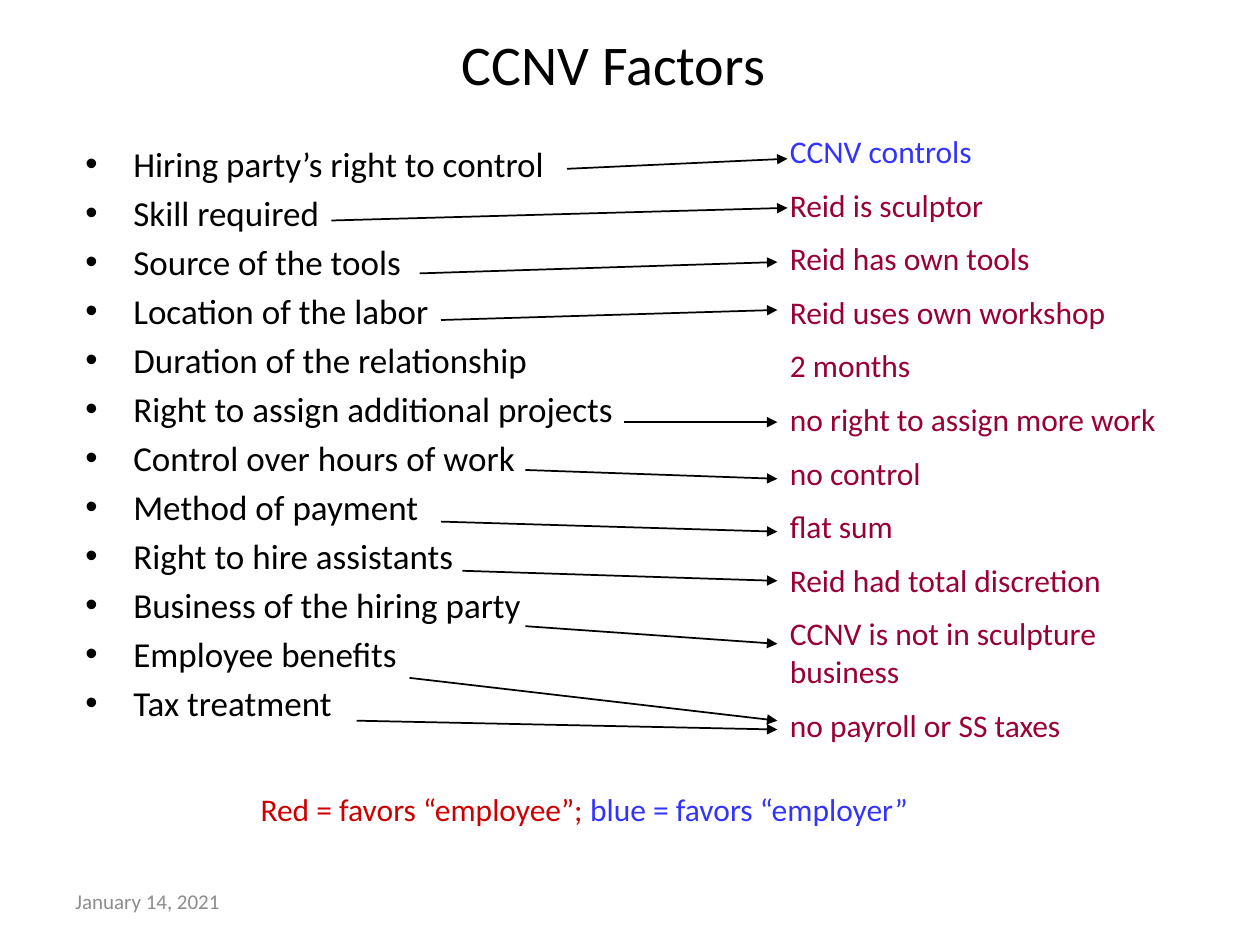
"""Build the CCNV factors slide."""
from lxml import etree
from pptx import Presentation
from pptx import util as u
from pptx.dml.color import RGBColor
from pptx.enum import shapes, text
from pptx.oxml.ns import qn

BLACK, BLUE, RED, WINE, GREY = "000000", "3333FF", "CC0000", "990033", "8C8C8C"
FONT = "Calibri"

FACTORS = [
    ("Hiring party’s right to control", (4.5, 1.34, 6.25, 1.26)),
    ("Skill required", (2.63, 1.75, 6.25, 1.65)),
    ("Source of the tools", (3.33, 2.17, 6.17, 2.08)),
    ("Location of the labor", (3.5, 2.54, 6.17, 2.46)),
    ("Duration of the relationship", None),
    ("Right to assign additional projects", (4.95, 3.35, 6.17, 3.35)),
    ("Control over hours of work", (4.17, 3.73, 6.17, 3.8)),
    ("Method of payment", (3.5, 4.14, 6.17, 4.22)),
    ("Right to hire assistants", (3.67, 4.53, 6.17, 4.61)),
    ("Business of the hiring party", (4.17, 4.97, 6.17, 5.11)),
    ("Employee benefits", (3.25, 5.38, 6.17, 5.72)),
    ("Tax treatment", (2.83, 5.72, 6.17, 5.79)),
]
FACTS = [
    ("CCNV controls", BLUE),
    ("Reid is sculptor", WINE),
    ("Reid has own tools", WINE),
    ("Reid uses own workshop", WINE),
    ("2 months", WINE),
    ("no right to assign more work", WINE),
    ("no control", WINE),
    ("flat sum", WINE),
    ("Reid had total discretion", WINE),
    ("CCNV is not in sculpture business", WINE),
    ("no payroll or SS taxes", WINE),
]
LEGEND = [("Red = favors “employee”; ", RED), ("blue = favors “employer”", BLUE)]


def paint(color, tone):
    color.rgb = RGBColor.from_string(tone)


def add_bullet(para):
    props = para._p.get_or_add_pPr()
    props.set("marL", str(u.Inches(0.38)))
    props.set("indent", str(-u.Inches(0.38)))
    etree.SubElement(props, qn("a:buFont")).set("typeface", "Arial")
    etree.SubElement(props, qn("a:buChar")).set("char", "•")


def add_text(slide, place, lines, size, gap=0, bullet=False, wrap=True,
             align=text.PP_ALIGN.LEFT, anchor=text.MSO_ANCHOR.TOP):
    frame = slide.shapes.add_textbox(*map(u.Inches, place)).text_frame
    frame.word_wrap = wrap
    frame.vertical_anchor = anchor
    for i, runs in enumerate(lines):
        para = frame.add_paragraph() if i else frame.paragraphs[0]
        if bullet:
            add_bullet(para)
        para.alignment = align
        para.space_before = u.Pt(gap if i else 0)
        for words, tone in runs:
            run = para.add_run()
            run.text = words
            run.font.name = FONT
            run.font.size = u.Pt(size)
            paint(run.font.color, tone)


def add_arrow(slide, ends):
    arrow = slide.shapes.add_connector(
        shapes.MSO_CONNECTOR.STRAIGHT, *map(u.Inches, ends))
    arrow.line.width = u.Pt(1)
    paint(arrow.line.color, BLACK)
    line = arrow.line._get_or_add_ln()
    etree.SubElement(line, qn("a:tailEnd")).set("type", "triangle")
    etree.SubElement(arrow._element.spPr, qn("a:effectLst"))


def main():
    deck = Presentation()
    deck.slide_width, deck.slide_height = u.Inches(10), u.Inches(7.5)
    slide = deck.slides.add_slide(deck.slide_layouts[6])
    middle = text.MSO_ANCHOR.MIDDLE
    add_text(slide, (0.5, 6.95, 2.33, 0.4), [[("January 14, 2021", GREY)]], 12,
             anchor=middle)
    add_text(slide, (0.58, 0, 8.58, 1), [[("CCNV Factors", BLACK)]], 32,
             align=text.PP_ALIGN.CENTER, anchor=middle)
    add_text(slide, (0.58, 1.08, 8.5, 6), [[(name, BLACK)] for name, _ in FACTORS],
             20, gap=4, bullet=True)
    add_text(slide, (6.17, 1, 3.39, 5), [[fact] for fact in FACTS], 18, gap=9)
    for _, ends in FACTORS:
        if ends:
            add_arrow(slide, ends)
    add_text(slide, (1.97, 6.22, 5.43, 0.4), [LEGEND], 18, wrap=False)
    deck.save("out.pptx")


if __name__ == "__main__":
    main()
